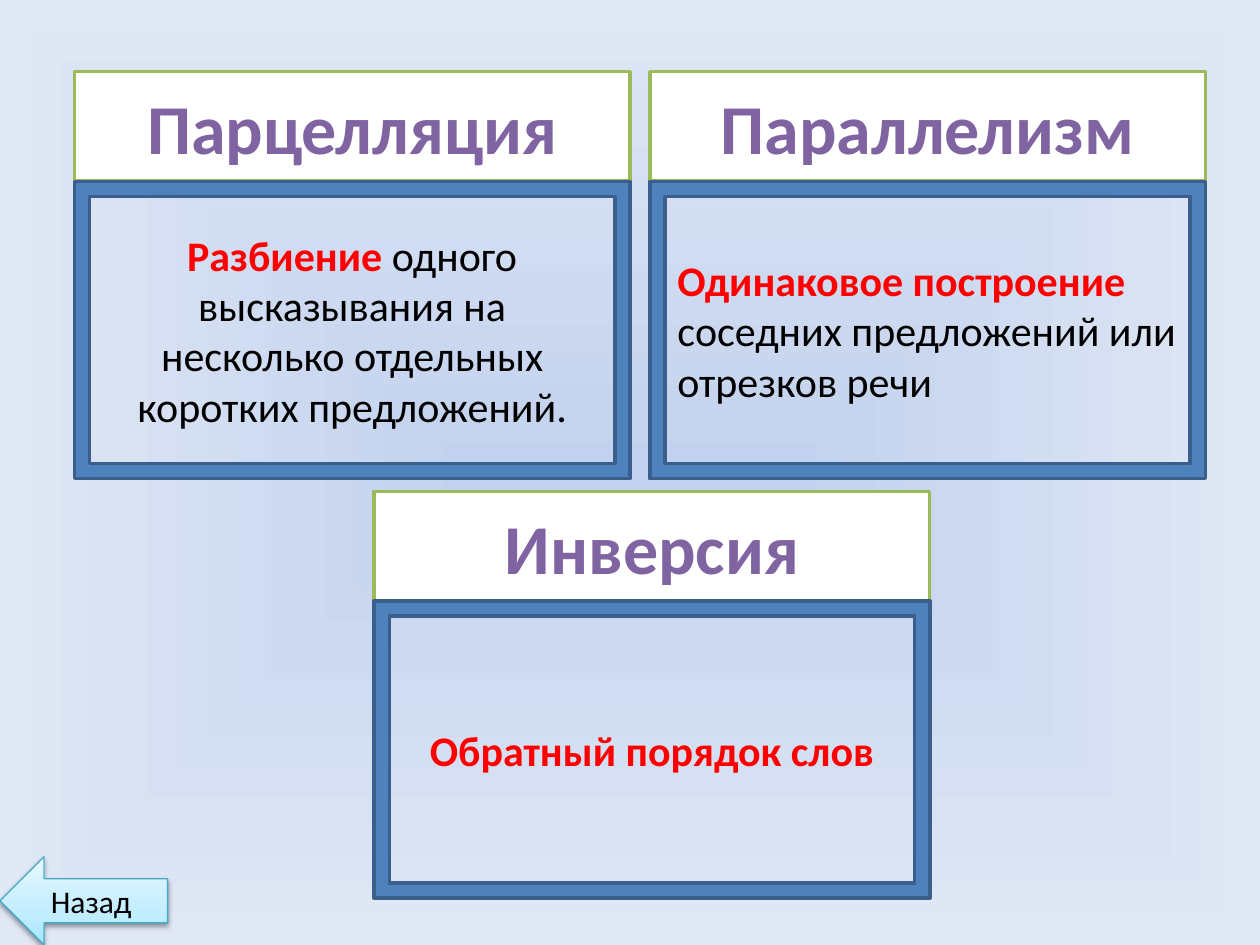
from dataclasses import dataclass

from pptx import Presentation
from pptx.dml.color import RGBColor
from pptx.enum.shapes import MSO_SHAPE
from pptx.enum.text import MSO_ANCHOR, PP_ALIGN
from pptx.oxml import parse_xml
from pptx.oxml.ns import nsdecls
from pptx.util import Pt

RECT, FRAME, ARROW = MSO_SHAPE.RECTANGLE, MSO_SHAPE.FRAME, MSO_SHAPE.LEFT_ARROW
MIDDLE = MSO_ANCHOR.MIDDLE
LEFT, CENTER = PP_ALIGN.LEFT, PP_ALIGN.CENTER


@dataclass(frozen=True)
class Theme:
    font: str = "Calibri"
    head_size: int = 40
    body_size: int = 24
    back_size: int = 18
    white: str = "FFFFFF"
    black: str = "000000"
    red: str = "FF0000"
    purple: str = "8064A2"
    green: str = "9BBB59"
    blue: str = "4F81BD"
    navy: str = "3A5F8C"
    teal: str = "46AAC5"
    glow: tuple = ((0, "C2D1ED"), (100, "E1E8F5"))
    ice: tuple = ((0, "A7E6FF"), (35, "C1EDFF"), (100, "E7F8FF"))


T = Theme()
HEAD_H = 62.6  # height of a card's heading
CARD_W, CARD_H = 317.5, 232.5


def grad(stops, shade):
    """Gradient fill element from (percent, colour) stops."""
    marks = "".join(
        f'<a:gs pos="{pos * 1000}"><a:srgbClr val="{color}"/></a:gs>'
        for pos, color in stops)
    return (f'<a:gradFill {nsdecls("a")} rotWithShape="1">'
            f'<a:gsLst>{marks}</a:gsLst>{shade}</a:gradFill>')


def add_box(slide, kind, box, line, width, fill=None):
    shape = slide.shapes.add_shape(kind, *(Pt(v) for v in box))
    shape.shadow.inherit = False
    shape.line.color.rgb = RGBColor.from_string(line)
    shape.line.width = Pt(width)
    if fill:
        shape.fill.solid()
        shape.fill.fore_color.rgb = RGBColor.from_string(fill)
    return shape


def add_text(shape, runs, size, align=CENTER):
    """Write (text, colour, bold) runs into one paragraph."""
    frame = shape.text_frame
    frame.word_wrap = True
    frame.vertical_anchor = MIDDLE
    para = frame.paragraphs[0]
    para.alignment = align
    for text, color, bold in runs:
        run = para.add_run()
        run.text = text
        font = run.font
        font.name, font.size, font.bold = T.font, Pt(size), bold
        font.color.rgb = RGBColor.from_string(color)


def add_ground(slide):
    shade = ('<a:path path="rect"><a:fillToRect l="50000" t="50000" '
             'r="50000" b="50000"/></a:path>')
    ground = parse_xml(
        f'<p:bg {nsdecls("p", "a")}><p:bgPr>{grad(T.glow, shade)}'
        '<a:effectLst/></p:bgPr></p:bg>')
    slide._element.cSld.insert(0, ground)


def add_card(slide, box, title, key, rest, align):
    x, y, w, h = box
    # Heading
    head = add_box(slide, RECT, (x, y, w, HEAD_H), T.green, 2, T.white)
    add_text(head, [(title, T.purple, True)], T.head_size)
    # Framed definition
    body = add_box(slide, FRAME, (x, y + HEAD_H, w, h - HEAD_H),
                   T.navy, 2, T.blue)
    body.adjustments[0] = 0.051
    runs = [(key, T.red, True)]
    if rest:
        runs.append((rest, T.black, False))
    add_text(body, runs, T.body_size, align)


def add_back(slide, box):
    arrow = add_box(slide, ARROW, box, T.teal, 0.75)
    props = arrow._element.spPr
    # The fill follows the position and the geometry
    props.insert(2, parse_xml(
        grad(T.ice, '<a:lin ang="16200000" scaled="1"/>')))
    # Soft shadow below
    props[-1].append(parse_xml(
        f'<a:outerShdw {nsdecls("a")} blurRad="{Pt(3.1)}" dist="{Pt(1.6)}" '
        f'dir="5400000" rotWithShape="0"><a:srgbClr val="{T.black}">'
        '<a:alpha val="38000"/></a:srgbClr></a:outerShdw>'))
    add_text(arrow, [("Назад ", T.black, False)], T.back_size)


def main():
    deck = Presentation()
    deck.slide_width, deck.slide_height = Pt(720), Pt(540)
    slide = deck.slides.add_slide(deck.slide_layouts[6])
    add_ground(slide)
    cards = (
        (42.5, 41, "Парцелляция", "Разбиение",
         " одного высказывания на несколько отдельных коротких предложений.",
         CENTER),
        (371.3, 41, "Параллелизм", "Одинаковое построение ",
         "соседних предложений или отрезков речи", LEFT),
        (213.8, 280.8, "Инверсия", "Обратный порядок слов", "", CENTER),
    )
    for x, y, *words in cards:
        add_card(slide, (x, y, CARD_W, CARD_H), *words)
    add_back(slide, (0, 489.6, 95.8, 50.4))
    deck.save("out.pptx")


if __name__ == "__main__":
    main()
